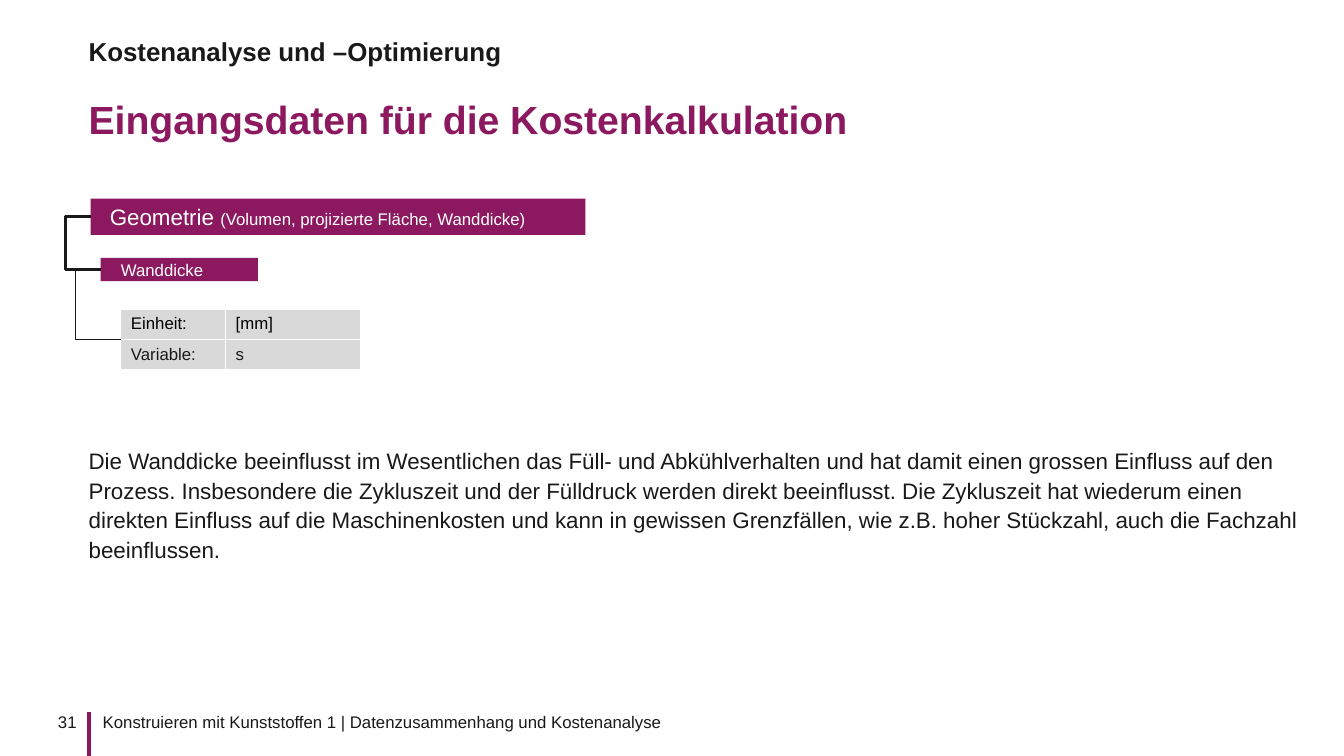
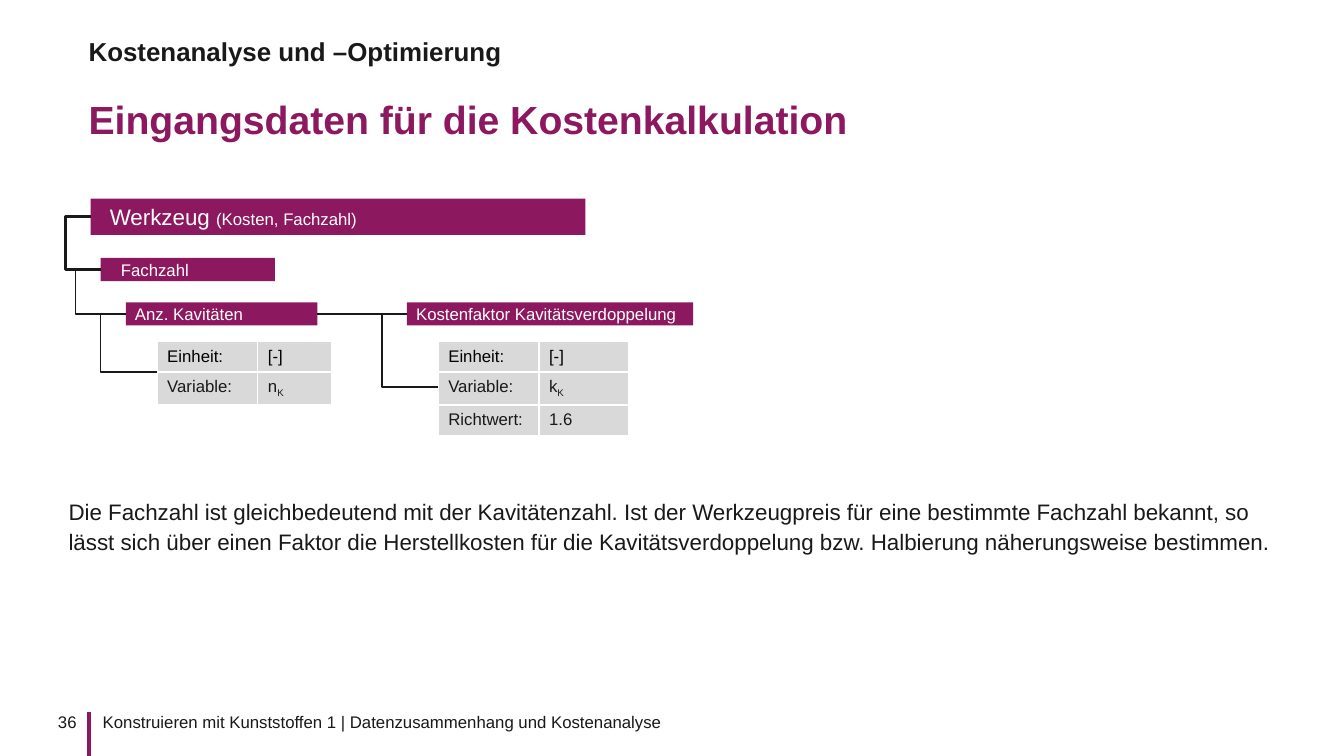
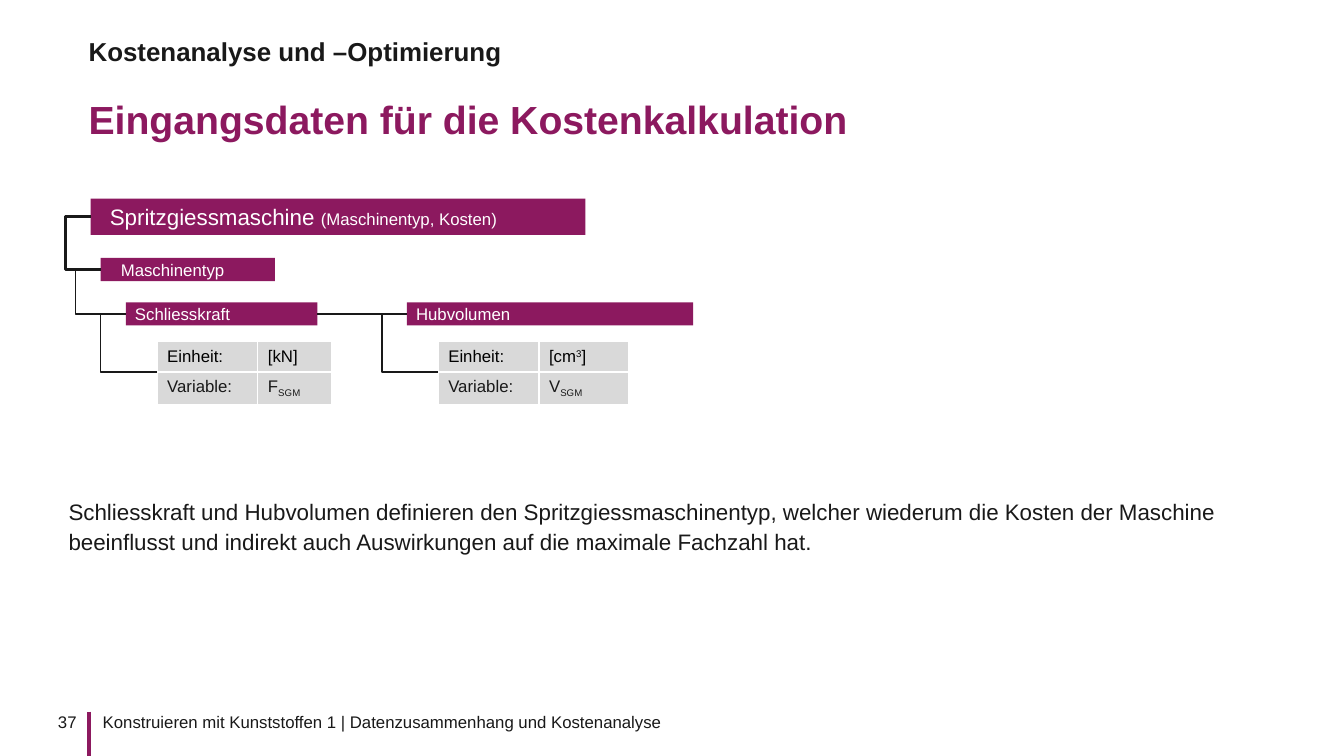
from lxml import etree
from pptx import Presentation
from pptx.dml.color import RGBColor
from pptx.enum.shapes import MSO_CONNECTOR, MSO_SHAPE
from pptx.enum.text import MSO_ANCHOR, PP_ALIGN
from pptx.oxml.ns import qn
from pptx.util import Inches, Pt

STRAIGHT, ELBOW = MSO_CONNECTOR.STRAIGHT, MSO_CONNECTOR.ELBOW
RECTANGLE = MSO_SHAPE.RECTANGLE
TOP, MIDDLE = MSO_ANCHOR.TOP, MSO_ANCHOR.MIDDLE
LEFT, RIGHT = PP_ALIGN.LEFT, PP_ALIGN.RIGHT

PLUM = RGBColor(0x8C, 0x19, 0x5F)
INK = RGBColor(0x19, 0x19, 0x19)
BLACK = RGBColor(0x00, 0x00, 0x00)
WHITE = RGBColor(0xFF, 0xFF, 0xFF)
GREY = RGBColor(0xD9, 0xD9, 0xD9)
FONT = "Arial"

CHAPTER = "Kostenanalyse und –Optimierung"
TITLE = "Eingangsdaten für die Kostenkalkulation"
FOOTER = "Konstruieren mit Kunststoffen 1 | Datenzusammenhang und Kostenanalyse"

SUBSCRIPT, SUPERSCRIPT = -25, 30
TRUNK_OFFSET = 0.25
ROW_HEIGHT = 0.3
BAR_HEIGHT = 0.23
GROUP_BAR = (0.9, 1.97, 4.91, 0.36)
TOPIC_LEFT, TOPIC_TOP = 1, 2.56
BRANCH_TOP = 3
BRANCH_BARS = [(1.25, 1.9), (4.04, 2.84)]
BRANCH_TABLES = [(1.56, (1, 0.73)), (4.35, (1, 0.89))]
BRANCH_TABLE_TOP = 3.39
TOPIC_TABLE = (1.2, 3.07, (1.04, 1.34))

SLIDES = [
    {
        "number": "31",
        "group": ("Geometrie ", "(Volumen, projizierte Fläche, Wanddicke)"),
        "topic": ("Wanddicke", 1.56),
        "rows": [("Einheit:", [("[mm]", 0)]), ("Variable:", [("s", 0)])],
        "branches": [],
        "body_at": (0.88, 4.41),
        "body": "Die Wanddicke beeinflusst im Wesentlichen das Füll- und Abkühlverhalten "
                "und hat damit einen grossen Einfluss auf den Prozess. Insbesondere die "
                "Zykluszeit und der Fülldruck werden direkt beeinflusst. Die Zykluszeit hat "
                "wiederum einen direkten Einfluss auf die Maschinenkosten und kann in "
                "gewissen Grenzfällen, wie z.B. hoher Stückzahl, auch die Fachzahl "
                "beeinflussen.",
    },
    {
        "number": "36",
        "group": ("Werkzeug ", "(Kosten, Fachzahl)"),
        "topic": ("Fachzahl", 1.73),
        "rows": [],
        "branches": [
            ("Anz. Kavitäten", [
                ("Einheit:", [("[-]", 0)]),
                ("Variable:", [("n", 0), ("K", SUBSCRIPT)]),
            ]),
            ("Kostenfaktor Kavitätsverdoppelung", [
                ("Einheit:", [("[-]", 0)]),
                ("Variable:", [("k", 0), ("K", SUBSCRIPT)]),
                ("Richtwert:", [("1.6", 0)]),
            ]),
        ],
        "body_at": (0.68, 4.92),
        "body": "Die Fachzahl ist gleichbedeutend mit der Kavitätenzahl. Ist der "
                "Werkzeugpreis für eine bestimmte Fachzahl bekannt, so lässt sich über einen "
                "Faktor die Herstellkosten für die Kavitätsverdoppelung bzw. Halbierung "
                "näherungsweise bestimmen.",
    },
    {
        "number": "37",
        "group": ("Spritzgiessmaschine ", "(Maschinentyp, Kosten)"),
        "topic": ("Maschinentyp", 1.73),
        "rows": [],
        "branches": [
            ("Schliesskraft", [
                ("Einheit:", [("[kN]", 0)]),
                ("Variable:", [("F", 0), ("SGM", SUBSCRIPT)]),
            ]),
            ("Hubvolumen", [
                ("Einheit:", [("[cm", 0), ("3", SUPERSCRIPT), ("]", 0)]),
                ("Variable:", [("V", 0), ("SGM", SUBSCRIPT)]),
            ]),
        ],
        "body_at": (0.68, 4.92),
        "body": "Schliesskraft und Hubvolumen definieren den Spritzgiessmaschinentyp, "
                "welcher wiederum die Kosten der Maschine beeinflusst und indirekt auch "
                "Auswirkungen auf die maximale Fachzahl hat.",
    },
]


def add_span(para, text, size, color, bold=False, baseline=0):
    span = para.add_run()
    span.text = text
    span.font.name = FONT
    span.font.size = Pt(size)
    span.font.bold = bold
    span.font.color.rgb = color
    if baseline:
        span.font._element.set("baseline", str(baseline * 1000))


def set_frame(frame, anchor, left=0, right=0):
    frame.word_wrap = True
    frame.vertical_anchor = anchor
    frame.margin_left, frame.margin_right = Inches(left), Inches(right)
    frame.margin_top = frame.margin_bottom = 0


def add_text(page, at, text, size, color=INK, bold=False, anchor=TOP,
             align=LEFT, spacing=1.0, left=0, right=0):
    box = page.shapes.add_textbox(*map(Inches, at))
    set_frame(box.text_frame, anchor, left, right)
    para = box.text_frame.paragraphs[0]
    para.alignment = align
    para.line_spacing = spacing
    add_span(para, text, size, color, bold)


def add_bar(page, at, spans, inset):
    bar = page.shapes.add_shape(RECTANGLE, *map(Inches, at))
    bar.shadow.inherit = False
    bar.fill.solid()
    bar.fill.fore_color.rgb = PLUM
    bar.line.fill.background()
    set_frame(bar.text_frame, MIDDLE, inset)
    para = bar.text_frame.paragraphs[0]
    para.alignment = LEFT
    for text, size in spans:
        add_span(para, text, size, WHITE)


def add_line(page, kind, start, end, width, color=INK):
    line = page.shapes.add_connector(kind, *map(Inches, (*start, *end)))
    line.line.color.rgb = color
    line.line.width = Pt(width)
    etree.SubElement(line._element.spPr, qn("a:effectLst"))
    return line


def add_bracket(page, start, end, width=1):
    bracket = add_line(page, ELBOW, start, end, width)
    ratio = -TRUNK_OFFSET / (end[0] - start[0])
    guides = bracket._element.spPr.find(qn("a:prstGeom")).find(qn("a:avLst"))
    guide = etree.SubElement(guides, qn("a:gd"))
    guide.set("name", "adj1")
    guide.set("fmla", f"val {round(ratio * 100000)}")


def add_values(page, left, top, widths, rows):
    size = (sum(widths), ROW_HEIGHT * len(rows))
    table = page.shapes.add_table(len(rows), 2, *map(Inches, (left, top, *size))).table
    table.first_row = table.horz_banding = False
    for column, width in zip(table.columns, widths):
        column.width = Inches(width)
    for index, (label, value) in enumerate(rows):
        color = INK if index else BLACK
        for column, spans in enumerate([[(label, 0)], value]):
            cell = table.cell(index, column)
            cell.fill.solid()
            cell.fill.fore_color.rgb = GREY
            for text, baseline in spans:
                add_span(cell.text_frame.paragraphs[0], text, 12, color, baseline=baseline)


def add_values_below(page, parent, left, top, widths, rows):
    add_values(page, left, top, widths, rows)
    add_bracket(page, parent, (left, top + ROW_HEIGHT * len(rows) / 2))


def add_frame(page, number):
    add_line(page, STRAIGHT, (0.88, 7.06), (0.88, 7.5), 3, PLUM)
    add_text(page, (0.9, 7.06, 5.87, 0.36), FOOTER, 12, left=0.12)
    add_text(page, (0.29, 7.06, 0.59, 0.2), number, 12, align=RIGHT, right=0.12)
    add_text(page, (0.88, 0.76, 12.09, 0.75), TITLE, 28, PLUM, True, MIDDLE, spacing=1.2)
    add_text(page, (0.88, 0.37, 12.09, 0.31), CHAPTER, 18.5, INK, True, MIDDLE, spacing=0.9)


def add_tree(page, content):
    name, detail = content["group"]
    topic, topic_width = content["topic"]
    group_joint = (GROUP_BAR[0], GROUP_BAR[1] + GROUP_BAR[3] / 2)
    topic_joint = (TOPIC_LEFT, TOPIC_TOP + BAR_HEIGHT / 2)
    branch_middle = BRANCH_TOP + BAR_HEIGHT / 2

    add_bar(page, GROUP_BAR, [(name, 16), (detail, 12)], 0.19)
    add_bar(page, (TOPIC_LEFT, TOPIC_TOP, topic_width, BAR_HEIGHT), [(topic, 12)], 0.2)
    add_bracket(page, group_joint, topic_joint, 2)
    if content["rows"]:
        add_values_below(page, topic_joint, *TOPIC_TABLE, content["rows"])

    previous_end = None
    for (label, rows), (left, width), (table_left, widths) in zip(
            content["branches"], BRANCH_BARS, BRANCH_TABLES):
        joint = (left, branch_middle)
        add_bar(page, (left, BRANCH_TOP, width, BAR_HEIGHT), [(label, 12)], 0.09)
        add_values_below(page, joint, table_left, BRANCH_TABLE_TOP, widths, rows)
        if previous_end:
            add_line(page, STRAIGHT, previous_end, joint, 1)
        else:
            add_bracket(page, topic_joint, joint)
        previous_end = (left + width, branch_middle)


def main():
    deck = Presentation()
    deck.slide_width, deck.slide_height = Inches(13.34), Inches(7.5)
    for content in SLIDES:
        page = deck.slides.add_slide(deck.slide_layouts[6])
        add_frame(page, content["number"])
        add_tree(page, content)
        add_text(page, (*content["body_at"], 12.09, 1.25), content["body"], 16, spacing=1.1)
    deck.save("out.pptx")


if __name__ == "__main__":
    main()
